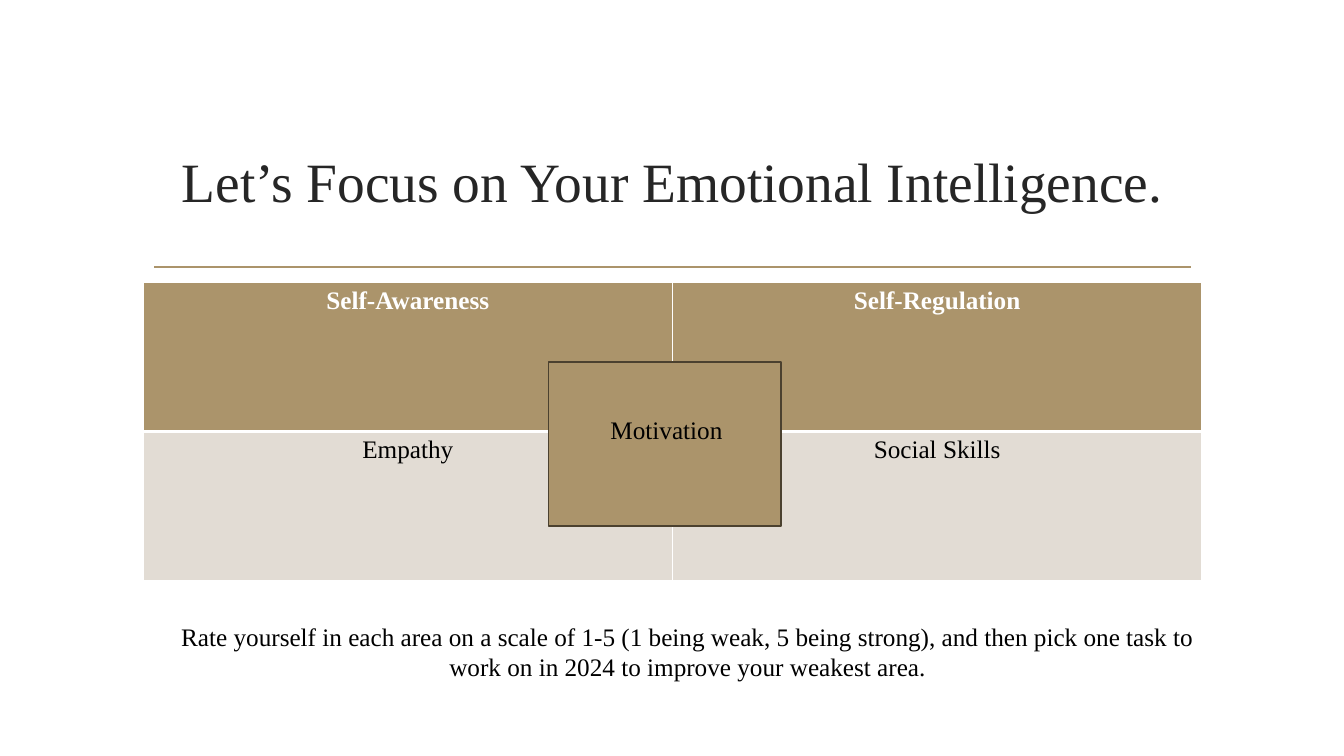
from lxml.etree import SubElement
from pptx import Presentation
from pptx.dml.color import RGBColor
from pptx.enum.shapes import MSO_CONNECTOR, MSO_SHAPE
from pptx.enum.text import MSO_ANCHOR, PP_ALIGN
from pptx.oxml.ns import qn
from pptx.util import Inches, Pt

TITLE = "Let’s Focus on Your Emotional Intelligence."
SKILLS = [["Self-Awareness", "Self-Regulation"], ["Empathy", "Social Skills"]]
CENTER = "Motivation"
TASK = ("Rate yourself in each area on a scale of 1-5 (1 being weak, 5 being strong), "
        "and then pick one task to work on in 2024 to improve your weakest area.")

FONT = "Times New Roman"
GOLD = RGBColor(0xAB, 0x94, 0x6B)
SAND = RGBColor(0xE2, 0xDC, 0xD4)
BROWN = RGBColor(0x4B, 0x41, 0x2F)
CHARCOAL = RGBColor(0x26, 0x26, 0x26)
BLACK = RGBColor(0, 0, 0)
WHITE = RGBColor(0xFF, 0xFF, 0xFF)

LEFT, WIDTH = 1.42, 10.5
TABLE_TOP, ROW_H = 2.8, 1.48
RULE_Y, RULE_X = 2.65, (1.53, 11.81)


def write(tf, text, size=18, color=BLACK, bold=False, anchor=MSO_ANCHOR.TOP):
    tf.word_wrap = True
    tf.vertical_anchor = anchor
    p = tf.paragraphs[0]
    p.alignment = PP_ALIGN.CENTER
    r = p.add_run()
    r.text = text
    r.font.name, r.font.size, r.font.bold = FONT, Pt(size), bold
    r.font.color.rgb = color


def add_text(slide, box, text, **fmt):
    write(slide.shapes.add_textbox(*map(Inches, box)).text_frame, text, **fmt)


def add_borders(cell, bottom):
    """Give the cell white edges, 1 pt except for the bottom one."""
    tc_pr = cell._tc.get_or_add_tcPr()
    edges = {"a:lnL": 1, "a:lnR": 1, "a:lnT": 1, "a:lnB": bottom}
    for i, (tag, width) in enumerate(edges.items()):
        ln = tc_pr.makeelement(qn(tag), {"w": str(Pt(width))})
        fill = SubElement(ln, qn("a:solidFill"))
        SubElement(fill, qn("a:srgbClr"), val=str(WHITE))
        tc_pr.insert(i, ln)


def add_skills(slide):
    rows, cols = len(SKILLS), len(SKILLS[0])
    table = slide.shapes.add_table(
        rows, cols, Inches(LEFT), Inches(TABLE_TOP),
        Inches(WIDTH), Inches(rows * ROW_H)).table
    for i, names in enumerate(SKILLS):
        head = i == 0
        for j, name in enumerate(names):
            cell = table.cell(i, j)
            cell.fill.solid()
            cell.fill.fore_color.rgb = GOLD if head else SAND
            add_borders(cell, bottom=3 if head else 1)
            write(cell.text_frame, name, color=WHITE if head else BLACK, bold=head)


def main():
    prs = Presentation()
    prs.slide_width, prs.slide_height = Inches(13.33), Inches(7.5)
    slide = prs.slides.add_slide(prs.slide_layouts[6])

    x1, x2 = map(Inches, RULE_X)
    rule = slide.shapes.add_connector(
        MSO_CONNECTOR.STRAIGHT, x1, Inches(RULE_Y), x2, Inches(RULE_Y))
    rule.line.color.rgb, rule.line.width = GOLD, Pt(1.25)
    SubElement(rule._element.spPr, qn("a:effectLst"))

    add_text(slide, (LEFT, 1.07, WIDTH, 1.43), TITLE,
             size=39.6, color=CHARCOAL, anchor=MSO_ANCHOR.MIDDLE)
    add_skills(slide)

    sp = slide.shapes.add_shape(
        MSO_SHAPE.RECTANGLE, *map(Inches, (5.44, 3.59, 2.31, 1.63)))
    sp.shadow.inherit = False
    sp.fill.solid()
    sp.fill.fore_color.rgb = GOLD
    sp.line.color.rgb, sp.line.width = BROWN, Pt(1.25)

    add_text(slide, (5.67, 4.06, 1.88, 0.4), CENTER)
    add_text(slide, (1.57, 6.11, WIDTH, 0.71), TASK)
    prs.save("out.pptx")


if __name__ == "__main__":
    main()
